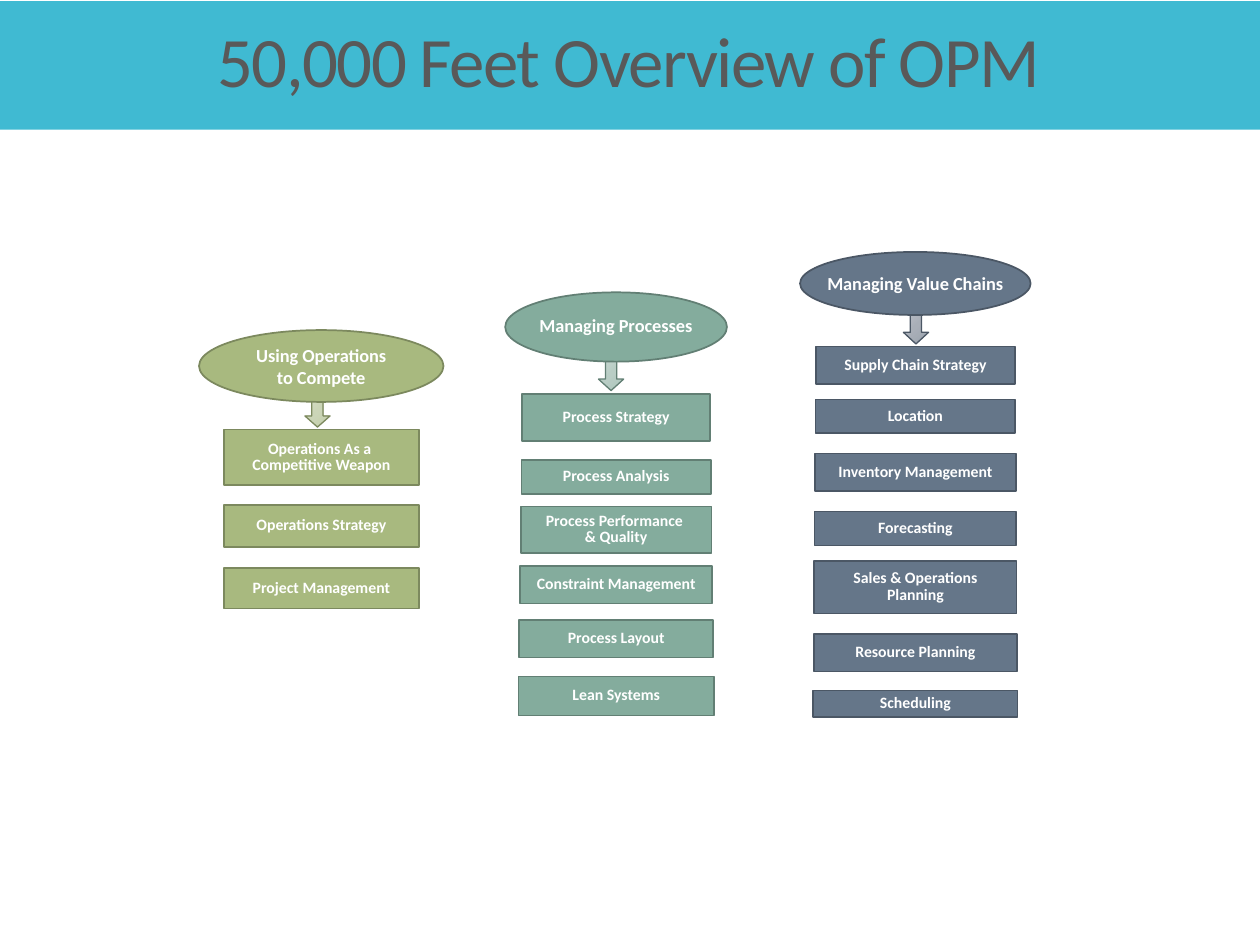
import copy
import pptx
import pptx.dml.color
import pptx.enum.shapes
import pptx.enum.text
import pptx.util

RGBColor = pptx.dml.color.RGBColor
SHAPE = pptx.enum.shapes.MSO_SHAPE

SLIDE_WIDTH, SLIDE_HEIGHT = pptx.util.Inches(10), pptx.util.Inches(7.5)
COLUMNS, ROWS = 1000, 750

WHITE = RGBColor(0xFF, 0xFF, 0xFF)
BANNER = RGBColor(0x40, 0xBA, 0xD2)
TITLE_GRAY = RGBColor(0x59, 0x59, 0x59)
GREEN, GREEN_EDGE = RGBColor(0xA8, 0xB9, 0x7F), RGBColor(0x7C, 0x89, 0x5E)
TEAL, TEAL_EDGE = RGBColor(0x84, 0xAC, 0x9D), RGBColor(0x62, 0x7F, 0x74)
SLATE, SLATE_EDGE = RGBColor(0x65, 0x76, 0x89), RGBColor(0x4B, 0x57, 0x65)
GREEN_FADE = [RGBColor(0xD9, 0xE0, 0xCB), RGBColor(0xCB, 0xD5, 0xB7), RGBColor(0xC4, 0xCF, 0xAB)]
TEAL_FADE = [RGBColor(0xCB, 0xDA, 0xD4), RGBColor(0xB9, 0xCD, 0xC5), RGBColor(0xAE, 0xC6, 0xBD)]
SLATE_FADE = [RGBColor(0xBB, 0xC0, 0xC7), RGBColor(0xA9, 0xAF, 0xB8), RGBColor(0x9A, 0xA3, 0xAE)]

TITLE_FONT = {"name": "Calibri", "size": pptx.util.Pt(40.5), "bold": False}
HEADING_FONT = {"name": "Calibri", "size": pptx.util.Pt(10.5), "bold": True}
TOPIC_FONT = {"name": "Calibri", "size": pptx.util.Pt(9), "bold": True}

THEMES = [
    {
        "box": (158, 262, 194, 221), "colors": (GREEN, GREEN_EDGE, GREEN_FADE),
        "heading": ("Using Operations\vto Compete", 57, 1.0),
        "arrow": (-3, 51, 26, 0.441), "widths": (155, 155),
        "topics": [
            ("Operations As a \nCompetitive Weapon", 79, 44),
            ("Operations Strategy", 139, 33),
            ("Project Management", 189, 32),
        ],
    },
    {
        "box": (401, 232, 176, 336), "colors": (TEAL, TEAL_EDGE, TEAL_FADE),
        "heading": ("Managing Processes", 55, 0.85),
        "arrow": (-4, 51, 27, 0.454), "widths": (149, 155),
        "topics": [
            ("Process Strategy", 81, 37),
            ("Process Analysis", 133, 27),
            ("Process Performance \v& Quality", 170, 37),
            ("Constraint Management", 217, 30),
            ("Process Layout", 260, 30),
            ("Lean Systems", 305, 31),
        ],
    },
    {
        "box": (635, 200, 183, 369), "colors": (SLATE, SLATE_EDGE, SLATE_FADE),
        "heading": ("Managing Value Chains", 50, 1.0),
        "arrow": (0.5, 46, 27, 0.459), "widths": (158, 162),
        "topics": [
            ("Supply Chain Strategy", 75, 30),
            ("Location", 117, 27),
            ("Inventory Management", 160, 30),
            ("Forecasting", 206, 27),
            ("Sales & Operations\vPlanning", 245, 42),
            ("Resource Planning", 303, 30),
            ("Scheduling", 348, 21),
        ],
    },
]


def add_block(slide, kind, box, fill, edge=None, weight=1):
    """Draw a flat shape on the slide grid."""
    left, top, width, height = box
    shape = slide.shapes.add_shape(
        kind,
        round(SLIDE_WIDTH * left / COLUMNS), round(SLIDE_HEIGHT * top / ROWS),
        round(SLIDE_WIDTH * width / COLUMNS), round(SLIDE_HEIGHT * height / ROWS))
    shape.shadow.inherit = False
    shape.fill.solid()
    shape.fill.fore_color.rgb = fill
    if edge is None:
        shape.line.fill.background()
    else:
        shape.line.color.rgb = edge
        shape.line.width = pptx.util.Pt(weight)
    return shape


def write_text(shape, text, font, color, spacing=0.85, wrap=False):
    """Fill a shape with centred text."""
    frame = shape.text_frame
    frame.text = text
    frame.word_wrap = wrap
    frame.vertical_anchor = pptx.enum.text.MSO_ANCHOR.MIDDLE
    for paragraph in frame.paragraphs:
        paragraph.alignment = pptx.enum.text.PP_ALIGN.CENTER
        paragraph.line_spacing = spacing
        for run in paragraph.runs:
            for name, value in font.items():
                setattr(run.font, name, value)
            run.font.color.rgb = color


def add_banner(slide, box, text):
    """Place the title banner."""
    banner = add_block(slide, SHAPE.RECTANGLE, box, BANNER)
    write_text(banner, text, TITLE_FONT, TITLE_GRAY, wrap=True)
    banner.text_frame.paragraphs[0].runs[0].font._element.set("spc", "-90")


def add_arrow(slide, box, fade, edge, head):
    """Place a down arrow with a three-stop gradient."""
    arrow = add_block(slide, SHAPE.DOWN_ARROW, box, edge, edge, 0.75)
    arrow.adjustments[0] = 0.447
    arrow.adjustments[1] = head
    arrow.fill.gradient()
    arrow.fill.gradient_angle = 315
    stop_list = arrow.element.spPr.gradFill.gsLst
    stop_list.append(copy.deepcopy(stop_list[0]))
    for stop, position, color in zip(arrow.fill.gradient_stops, (0, 0.5, 1), fade):
        stop.position = position
        stop.color.rgb = color


def add_theme(slide, box, colors, heading, arrow, widths, topics):
    """Place a heading ellipse, its arrow and its topic boxes inside a box."""
    left, top, width, height = box
    center = left + width / 2
    fill, edge, fade = colors
    shift, arrow_top, arrow_height, head = arrow
    add_arrow(slide, (center + shift - 10, top + arrow_top, 20, arrow_height), fade, edge, head)

    label, heading_height, spacing = heading
    ellipse = add_block(slide, SHAPE.OVAL, (left, top, width, heading_height), fill, edge)
    write_text(ellipse, label, HEADING_FONT, WHITE, spacing)

    first, last = widths
    for index, (label, offset, topic_height) in enumerate(topics):
        topic_width = first + (last - first) * index / (len(topics) - 1)
        topic_box = (center - topic_width / 2, top + offset, topic_width, topic_height)
        topic = add_block(slide, SHAPE.RECTANGLE, topic_box, fill, edge)
        write_text(topic, label, TOPIC_FONT, WHITE)


def main():
    """Build and save the overview slide."""
    presentation = pptx.Presentation()
    presentation.slide_width, presentation.slide_height = SLIDE_WIDTH, SLIDE_HEIGHT
    slide = presentation.slides.add_slide(presentation.slide_layouts[6])
    add_banner(slide, (-2, 1, 1002, 102), "50,000 Feet Overview of OPM")
    for theme in THEMES:
        add_theme(slide, **theme)
    presentation.save("out.pptx")


if __name__ == "__main__":
    main()
